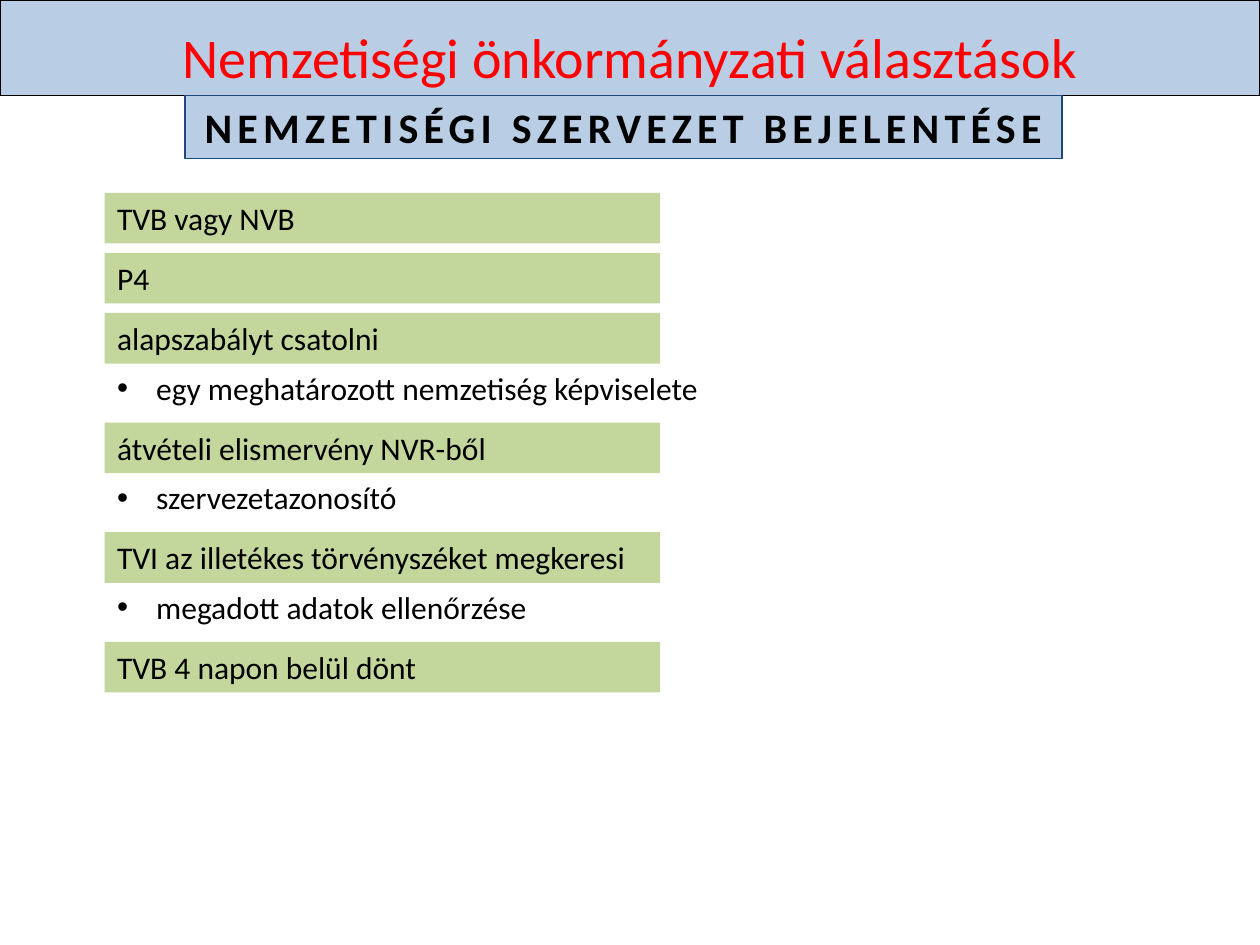
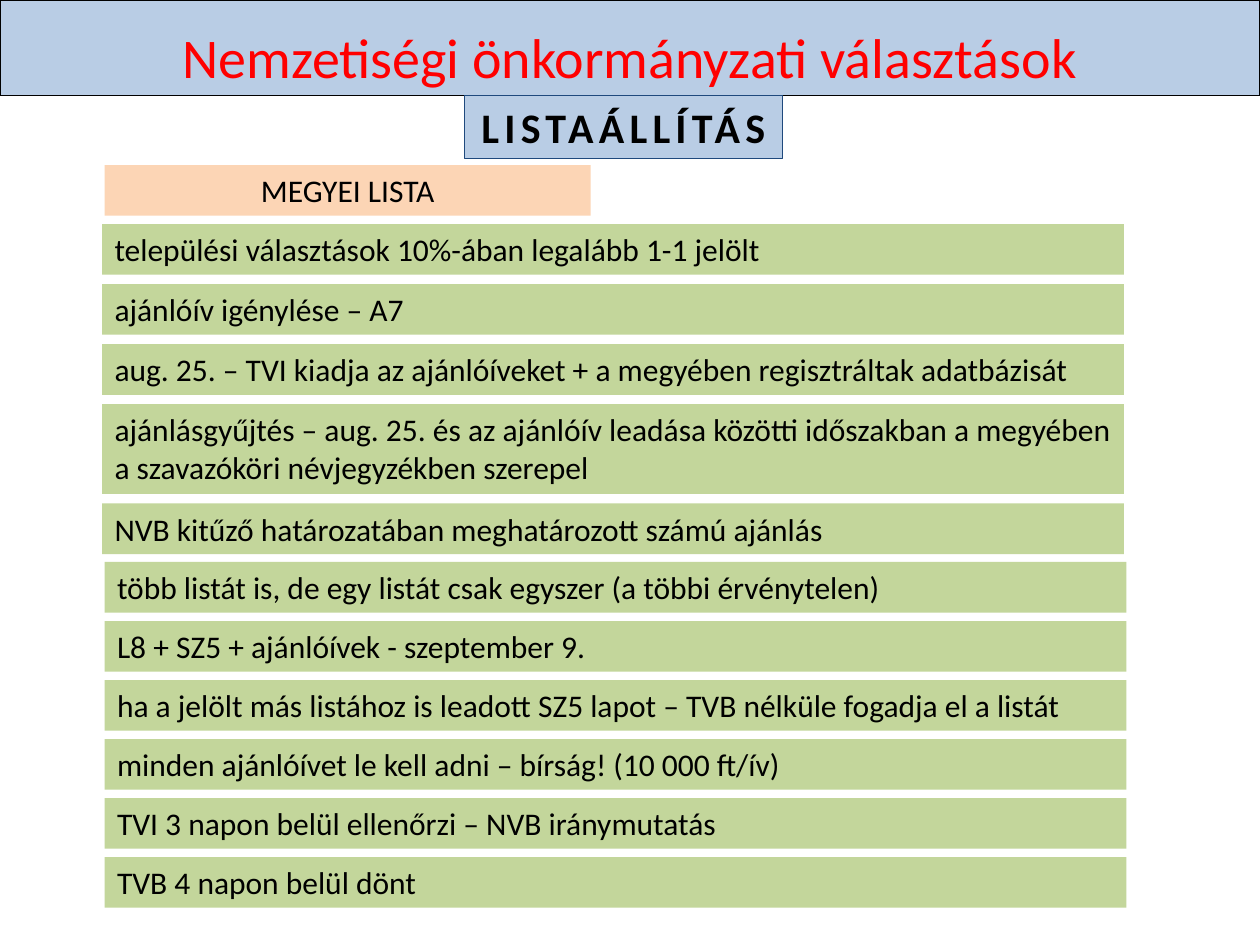
"""Build two slides on the rules of nationality self-government elections."""
from lxml import etree
from pptx import Presentation
from pptx.dml.color import RGBColor
from pptx.enum.shapes import MSO_SHAPE
from pptx.enum.text import MSO_ANCHOR, MSO_AUTO_SIZE, PP_ALIGN
from pptx.oxml.ns import qn
from pptx.util import Cm, Pt

RECTANGLE = MSO_SHAPE.RECTANGLE
TOP, BOTTOM = MSO_ANCHOR.TOP, MSO_ANCHOR.BOTTOM
LEFT, CENTER = PP_ALIGN.LEFT, PP_ALIGN.CENTER
FIT_SHAPE = MSO_AUTO_SIZE.SHAPE_TO_FIT_TEXT

BLACK = RGBColor(0x00, 0x00, 0x00)
RED = RGBColor(0xFF, 0x00, 0x00)
NAVY = RGBColor(0x1F, 0x49, 0x7D)
PALE_BLUE = RGBColor(0xB9, 0xCD, 0xE5)
GREEN = RGBColor(0xC3, 0xD6, 0x9B)
PEACH = RGBColor(0xFC, 0xD5, 0xB5)

FONT = "Calibri"
SLIDE_WIDTH, SLIDE_HEIGHT = 25.4, 19.05
TITLE = "Nemzetiségi önkormányzati választások"
TITLE_HEIGHT, TOPIC_HEIGHT, TOPIC_CENTER = 1.93, 1.27, 12.57
LINE_HEIGHT, EXTRA_LINE = 1.02, 0.79
MARGIN, NOTE_WIDTH, NOTE_STEP, NOTE_INDENT = 2.11, 22.0, 1.0, 0.79

REGISTRATION_STEPS = [
    ("TVB vagy NVB", None),
    ("P4", None),
    ("alapszabályt csatolni", "egy meghatározott nemzetiség képviselete"),
    ("átvételi elismervény NVR-ből", "szervezetazonosító"),
    ("TVI az illetékes törvényszéket megkeresi", "megadott adatok ellenőrzése"),
    ("TVB 4 napon belül dönt", None),
]
NOMINATION_RULES = [
    ("települési választások 10%-ában legalább 1-1 jelölt", 1),
    ("ajánlóív igénylése – A7", 1),
    ("aug. 25. – TVI kiadja az ajánlóíveket + a megyében regisztráltak adatbázisát", 1),
    ("ajánlásgyűjtés – aug. 25. és az ajánlóív leadása közötti időszakban "
     "a megyében a szavazóköri névjegyzékben szerepel", 2),
    ("NVB kitűző határozatában meghatározott számú ajánlás", 1),
]
SUBMISSION_RULES = [
    ("több listát is, de egy listát csak egyszer (a többi érvénytelen)", 1),
    ("L8 + SZ5 + ajánlóívek - szeptember 9.", 1),
    ("ha a jelölt más listához is leadott SZ5 lapot – TVB nélküle fogadja el a listát", 1),
    ("minden ajánlóívet le kell adni – bírság! (10 000 ft/ív)", 1),
    ("TVI 3 napon belül ellenőrzi – NVB iránymutatás", 1),
    ("TVB 4 napon belül dönt", 1),
]


def write(shape, text, size=18, color=BLACK, align=LEFT, anchor=TOP):
    """Put one formatted paragraph into a shape and return the paragraph."""
    frame = shape.text_frame
    frame.word_wrap = True
    frame.vertical_anchor = anchor
    frame.text = text
    paragraph = frame.paragraphs[0]
    paragraph.alignment = align
    font = paragraph.runs[0].font
    font.name, font.size, font.color.rgb = FONT, Pt(size), color
    return paragraph


def add_band(slide, left, top, width, height, fill, outline=None):
    """Add a flat rectangle, outlined only when a line colour is given."""
    band = slide.shapes.add_shape(RECTANGLE, Cm(left), Cm(top), Cm(width), Cm(height))
    band.shadow.inherit = False
    band.fill.solid()
    band.fill.fore_color.rgb = fill
    if outline is None:
        band.line.fill.background()
    else:
        band.line.color.rgb = outline
        band.line.width = Pt(0.75)
    return band


def add_header(slide, topic, topic_width):
    """Add the shared title band and the topic tab below it."""
    title = add_band(slide, 0, 0, SLIDE_WIDTH, TITLE_HEIGHT, PALE_BLUE, BLACK)
    write(title, TITLE, 32, RED, CENTER, BOTTOM)
    tab = add_band(slide, TOPIC_CENTER - topic_width / 2, TITLE_HEIGHT,
                   topic_width, TOPIC_HEIGHT, PALE_BLUE, NAVY)
    run = write(tab, topic, 24, align=CENTER).runs[0]
    tab.text_frame.word_wrap = False
    tab.text_frame.auto_size = FIT_SHAPE
    run.font.bold = True
    run._r.get_or_add_rPr().set("spc", "300")


def add_bar(slide, text, left, top, width, lines=1, fill=GREEN, align=LEFT):
    """Add a text bar and return its height in centimetres."""
    height = LINE_HEIGHT + (lines - 1) * EXTRA_LINE
    bar = add_band(slide, left, top, width, height, fill)
    write(bar, text, align=align)
    bar.text_frame.auto_size = FIT_SHAPE
    return height


def add_note(slide, text, top):
    """Add a bulleted remark under a bar."""
    note = slide.shapes.add_textbox(Cm(MARGIN), Cm(top), Cm(NOTE_WIDTH), Cm(LINE_HEIGHT))
    properties = write(note, text)._p.get_or_add_pPr()
    properties.set("marL", str(Cm(NOTE_INDENT)))
    properties.set("indent", str(-Cm(NOTE_INDENT)))
    etree.SubElement(properties, qn("a:buFont")).set("typeface", "Arial")
    etree.SubElement(properties, qn("a:buChar")).set("char", "•")


def add_steps(slide, steps, top, width, gap):
    """Stack bars, each with its optional remark."""
    for step, remark in steps:
        add_bar(slide, step, MARGIN, top, width)
        if remark:
            top += NOTE_STEP
            add_note(slide, remark, top)
        top += LINE_HEIGHT + gap


def add_rules(slide, rules, left, top, gap):
    """Stack wide bars of one or more lines."""
    for rule, lines in rules:
        top += add_bar(slide, rule, left, top, 20.6, lines) + gap


def main():
    """Build and save the presentation."""
    deck = Presentation()
    deck.slide_width, deck.slide_height = Cm(SLIDE_WIDTH), Cm(SLIDE_HEIGHT)
    blank = deck.slide_layouts[6]

    registration = deck.slides.add_slide(blank)
    add_header(registration, "NEMZETISÉGI SZERVEZET BEJELENTÉSE", 17.68)
    add_steps(registration, REGISTRATION_STEPS, 3.89, 11.2, 0.19)

    county_list = deck.slides.add_slide(blank)
    add_header(county_list, "LISTAÁLLÍTÁS", 6.4)
    add_bar(county_list, "MEGYEI LISTA", MARGIN, 3.33, 9.8, fill=PEACH, align=CENTER)
    add_rules(county_list, NOMINATION_RULES, 2.06, 4.52, 0.19)
    add_rules(county_list, SUBMISSION_RULES, MARGIN, 11.33, 0.17)

    deck.save("out.pptx")


if __name__ == "__main__":
    main()
